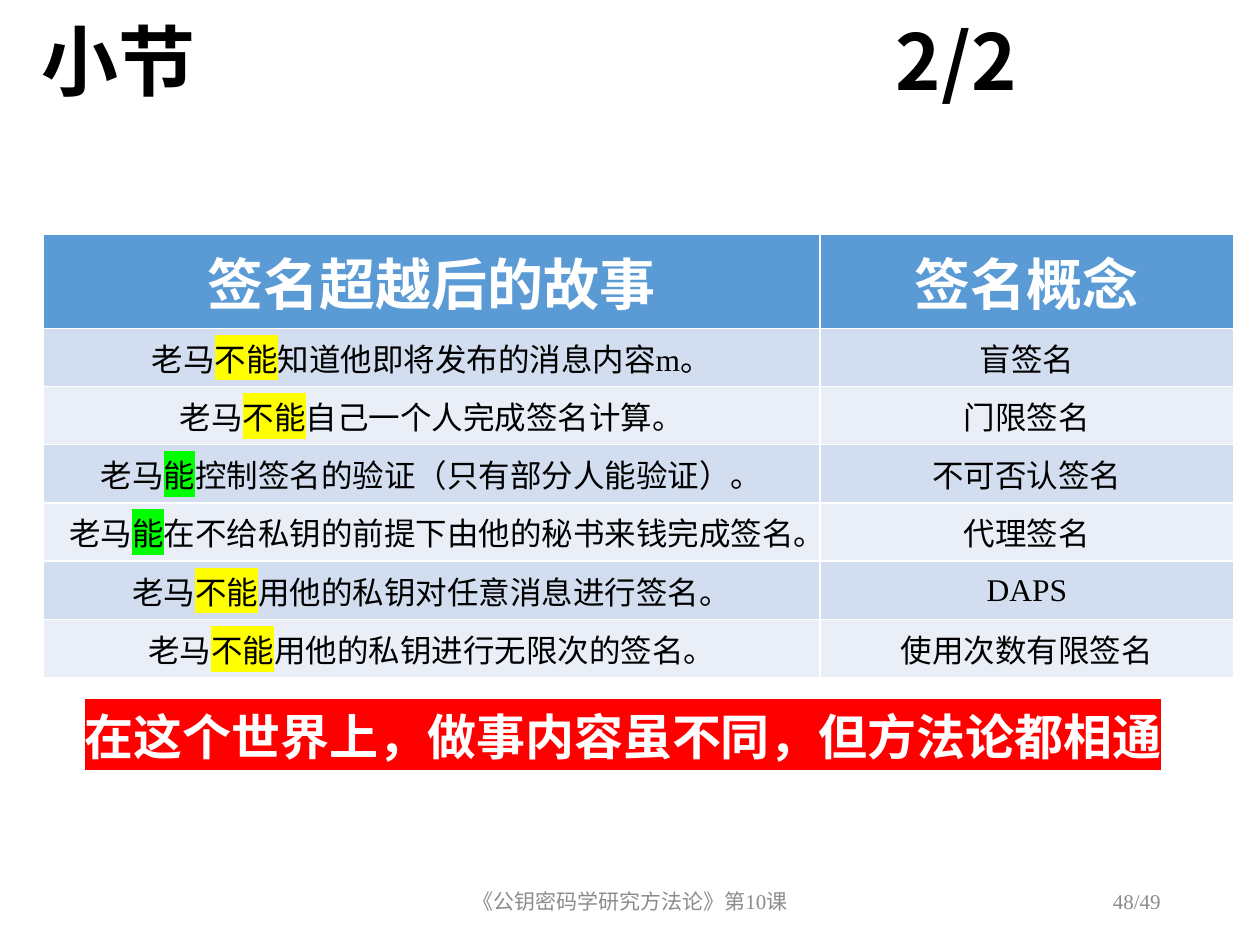
from lxml.etree import SubElement
from pptx import Presentation
from pptx.dml.color import RGBColor
from pptx.enum.text import MSO_ANCHOR as Anchor, MSO_AUTO_SIZE as AutoSize, PP_ALIGN as Align
from pptx.oxml import parse_xml
from pptx.oxml.ns import nsdecls, qn
from pptx.util import Inches, Pt

WHITE = RGBColor(0xFF, 0xFF, 0xFF)
BLACK = RGBColor(0x00, 0x00, 0x00)
GRAY = RGBColor(0x8C, 0x8C, 0x8C)
BLUE = RGBColor(0x5B, 0x9B, 0xD5)
BANDS = [RGBColor(0xD2, 0xDE, 0xEF), RGBColor(0xEA, 0xEF, 0xF7)]
RED = RGBColor(0xFF, 0x00, 0x00)
MARKS = {
    "不能": RGBColor(0xFF, 0xFF, 0x00),
    "能": RGBColor(0x00, 0xFF, 0x00),
}
SERIF, SANS = "Times New Roman", "Noto Sans CJK SC"

TITLE = "小节\t2/2"
TITLE_TAB = Inches(6.78)
HEADER = ("签名超越后的故事", "签名概念")
SUBJECT = "老马"
STORIES = [
    ("不能", "知道他即将发布的消息内容m。", "盲签名"),
    ("不能", "自己一个人完成签名计算。", "门限签名"),
    ("能", "控制签名的验证（只有部分人能验证）。", "不可否认签名"),
    ("能", "在不给私钥的前提下由他的秘书来钱完成签名。", "代理签名"),
    ("不能", "用他的私钥对任意消息进行签名。", "DAPS"),
    ("不能", "用他的私钥进行无限次的签名。", "使用次数有限签名"),
]
COLUMNS = (6.17, 3.28)
ROW_HEIGHT = 0.41
MOTTO = "在这个世界上，做事内容虽不同，但方法论都相通"
FOOTER = "《公钥密码学研究方法论》第10课"
PAGE = "48/49"


def write(para, text, size=18, color=BLACK, bold=False, font=SERIF, mark=None):
    """Add one formatted span, highlighted when mark is a colour."""
    span = para.add_run()
    span.text = text
    span.font.size, span.font.bold, span.font.name = Pt(size), bold, font
    span.font.color.rgb = color
    latin = span.font._element.find(qn("a:latin"))
    if mark is not None:
        latin.addprevious(parse_xml(
            f'<a:highlight {nsdecls("a")}><a:srgbClr val="{mark}"/></a:highlight>'))
    latin.addnext(parse_xml(f'<a:ea {nsdecls("a")} typeface="{SANS}"/>'))


def add_text(slide, area, text, align, anchor=Anchor.TOP, grow=False, **style):
    box = slide.shapes.add_textbox(*map(Inches, area))
    frame = box.text_frame
    frame.word_wrap = True
    frame.vertical_anchor = anchor
    frame.auto_size = AutoSize.SHAPE_TO_FIT_TEXT if grow else AutoSize.NONE
    frame.paragraphs[0].alignment = align
    write(frame.paragraphs[0], text, **style)


def add_title(slide):
    title = slide.shapes.title
    title.left, title.top, title.width, title.height = map(Inches, (0.23, 0.19, 9.57, 0.92))
    frame = title.text_frame
    frame.auto_size = AutoSize.NONE
    frame.vertical_anchor = Anchor.TOP
    frame.margin_top = 0
    para = frame.paragraphs[0]
    para.alignment = Align.LEFT
    para.line_spacing = 0.9
    tabs = SubElement(para._p.get_or_add_pPr(), qn("a:tabLst"))
    SubElement(tabs, qn("a:tab"), pos=str(TITLE_TAB), algn="l")
    write(para, TITLE, size=44, bold=True, font=SANS)


def prepare_cell(cell, fill):
    """Fill and centre the cell, and return its paragraph."""
    cell.fill.solid()
    cell.fill.fore_color.rgb = fill
    cell.vertical_anchor = Anchor.MIDDLE
    para = cell.text_frame.paragraphs[0]
    para.alignment = Align.CENTER
    return para


def add_stories(slide):
    count = len(STORIES) + 1
    table = slide.shapes.add_table(
        count, len(COLUMNS), Inches(0.34), Inches(1.86),
        Inches(sum(COLUMNS)), Inches(count * ROW_HEIGHT)).table
    for column, width in zip(table.columns, COLUMNS):
        column.width = Inches(width)
    for index, heading in enumerate(HEADER):
        write(prepare_cell(table.cell(0, index), BLUE), heading,
              size=32, color=WHITE, bold=True)
    for row, (ability, action, concept) in enumerate(STORIES, 1):
        story, name = (prepare_cell(table.cell(row, column), BANDS[(row - 1) % 2])
                       for column in range(2))
        write(story, SUBJECT)
        write(story, ability, mark=MARKS[ability])
        write(story, action)
        write(name, concept)


def main():
    deck = Presentation()
    deck.slide_width, deck.slide_height = Inches(10), Inches(7.5)
    slide = deck.slides.add_slide(deck.slide_layouts[5])
    add_title(slide)
    add_text(slide, (3.31, 6.95, 3.38, 0.4), FOOTER, Align.CENTER,
             anchor=Anchor.MIDDLE, size=12, color=GRAY)
    add_text(slide, (7.06, 6.95, 2.25, 0.4), PAGE, Align.RIGHT,
             anchor=Anchor.MIDDLE, size=12, color=GRAY)
    add_stories(slide)
    add_text(slide, (0, 5.56, 9.89, 0.57), MOTTO, Align.CENTER, grow=True,
             size=28, color=WHITE, bold=True, mark=RED)
    deck.save("out.pptx")


if __name__ == "__main__":
    main()
